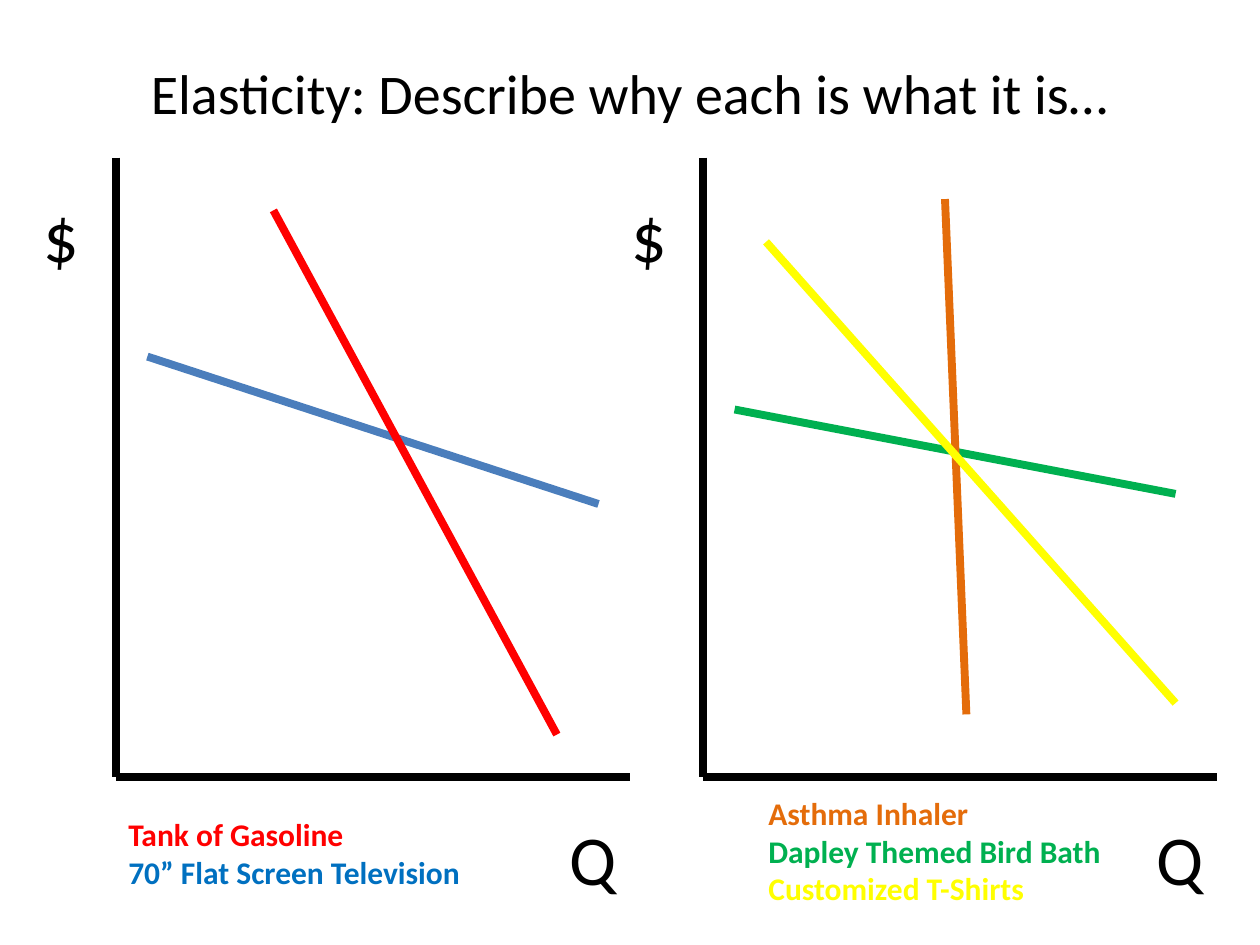
"""Build a slide that compares demand curves on two price and quantity graphs."""
from dataclasses import dataclass

import pptx
import pptx.dml.color
import pptx.enum.shapes
import pptx.enum.text
import pptx.oxml.ns
import pptx.util
from lxml import etree
from pptx.util import Inches


@dataclass(frozen=True)
class Theme:
    font: str = "Calibri"
    black: str = "000000"
    red: str = "FF0000"
    steel: str = "4B7EBC"
    blue: str = "0070C0"
    green: str = "00B050"
    orange: str = "E46C0A"
    yellow: str = "FFFF00"
    title: int = 32
    axis: int = 40
    label: int = 18
    line: float = 4.5


THEME = Theme()


def add_line(slide, start, end, color):
    ends = [Inches(n) for n in (*start, *end)]
    line = slide.shapes.add_connector(
        pptx.enum.shapes.MSO_CONNECTOR.STRAIGHT, *ends)
    line.line.width = pptx.util.Pt(THEME.line)
    line.line.color.rgb = pptx.dml.color.RGBColor.from_string(color)
    props = line._element.spPr
    etree.SubElement(props, pptx.oxml.ns.qn("a:effectLst"))


def add_text(slide, box, rows, size, bold=False):
    shape = slide.shapes.add_textbox(*[Inches(n) for n in box])
    frame = shape.text_frame
    frame.word_wrap = True
    frame.text = "\n".join(text for text, color in rows)
    for para, (text, color) in zip(frame.paragraphs, rows):
        font = para.runs[0].font
        font.name = THEME.font
        font.size = pptx.util.Pt(size)
        font.bold = bold
        font.color.rgb = pptx.dml.color.RGBColor.from_string(color)
    return frame


def add_title(slide, text):
    frame = add_text(slide, (0.5, 0.3, 9, 0.87), [(text, THEME.black)],
                     THEME.title)
    frame.vertical_anchor = pptx.enum.text.MSO_ANCHOR.MIDDLE
    frame.paragraphs[0].alignment = pptx.enum.text.PP_ALIGN.CENTER


def add_graph(slide, left, curves):
    base = (left, 6.17)
    add_line(slide, (left, 1.25), base, THEME.black)
    add_line(slide, base, (left + 4.08, 6.17), THEME.black)
    add_text(slide, (left - 0.67, 1.48, 0.42, 0.77),
             [("$", THEME.black)], THEME.axis)
    add_text(slide, (left + 3.5, 6.42, 0.5, 0.77),
             [("Q", THEME.black)], THEME.axis)
    for start, end, color in curves:
        add_line(slide, start, end, color)


def main():
    deck = pptx.Presentation()
    deck.slide_width, deck.slide_height = Inches(10), Inches(7.5)
    slide = deck.slides.add_slide(deck.slide_layouts[6])

    add_title(slide, "Elasticity: Describe why each is what it is…")
    add_graph(slide, 0.92, [
        ((1.17, 2.83), (4.75, 4), THEME.steel),
        ((2.17, 1.67), (4.42, 5.83), THEME.red),
    ])
    add_graph(slide, 5.58, [
        ((5.83, 3.25), (9.33, 3.92), THEME.green),
        ((7.5, 1.58), (7.67, 5.67), THEME.orange),
        ((6.08, 1.92), (9.33, 5.58), THEME.yellow),
    ])
    add_text(slide, (0.92, 6.42, 3, 0.71), [
        ("Tank of Gasoline", THEME.red),
        ("70” Flat Screen Television", THEME.blue),
    ], THEME.label, bold=True)
    add_text(slide, (6, 6.25, 3, 1.01), [
        ("Asthma Inhaler", THEME.orange),
        ("Dapley Themed Bird Bath", THEME.green),
        ("Customized T-Shirts", THEME.yellow),
    ], THEME.label, bold=True)
    deck.save("out.pptx")


if __name__ == "__main__":
    main()
